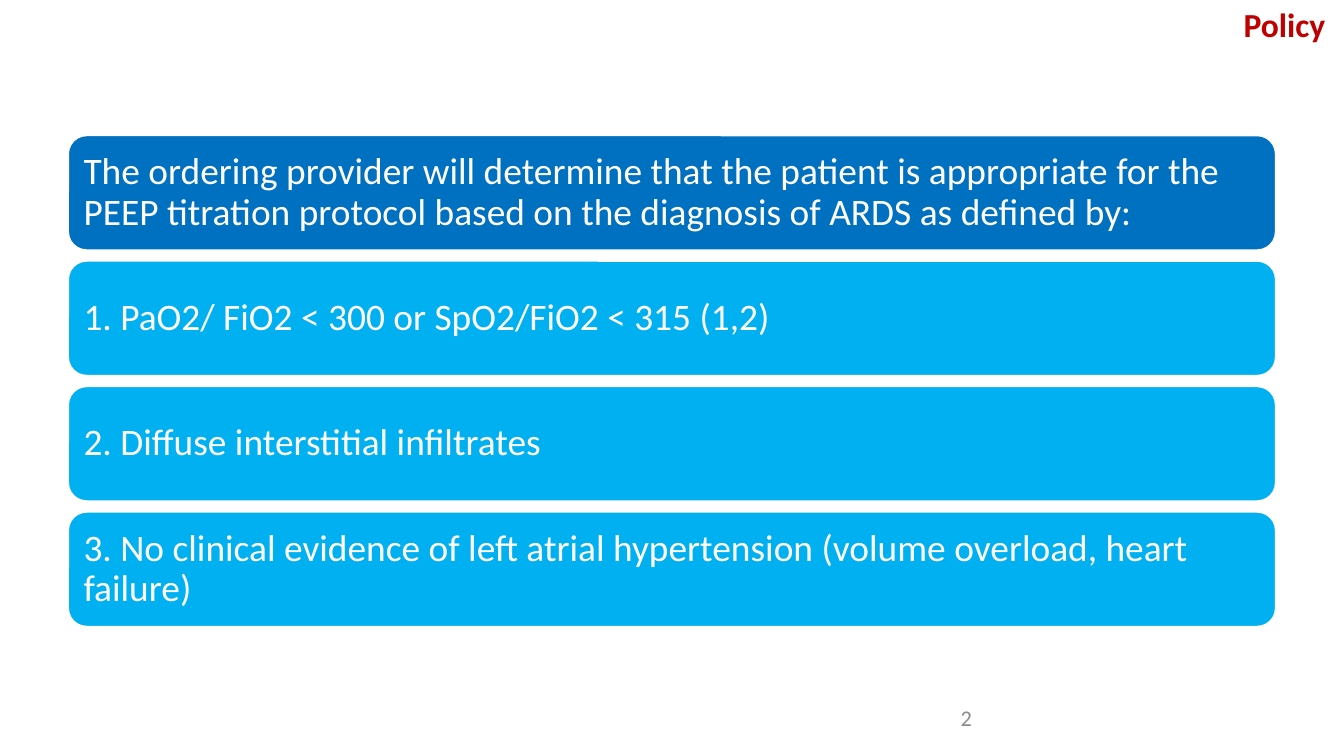
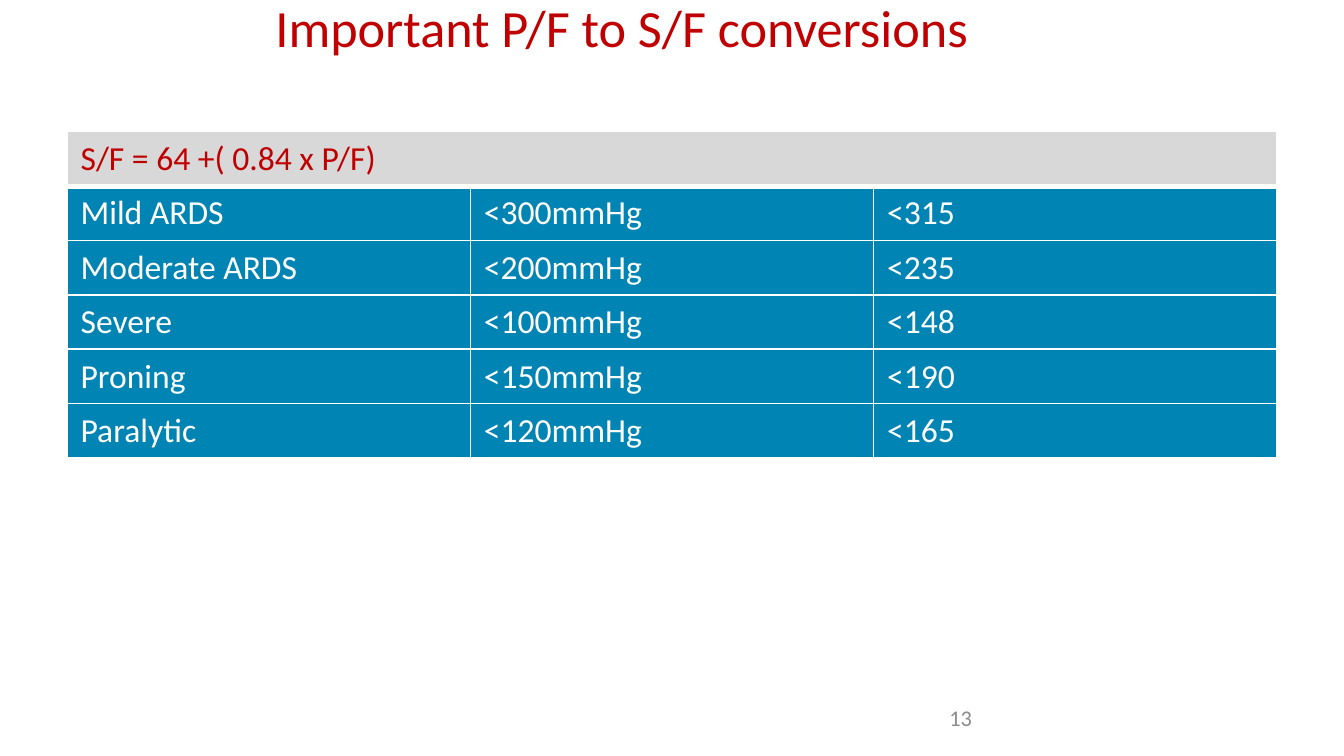
from dataclasses import dataclass

from lxml import etree
from pptx import Presentation
from pptx.dml.color import RGBColor
from pptx.enum.shapes import MSO_SHAPE
from pptx.enum.text import MSO_ANCHOR, PP_ALIGN
from pptx.oxml.ns import qn
from pptx.presentation import Presentation as Deck
from pptx.shapes.autoshape import Shape
from pptx.slide import Slide
from pptx.table import _Cell
from pptx.text.text import TextFrame
from pptx.util import Inches, Pt

ROUNDED = MSO_SHAPE.ROUNDED_RECTANGLE
MIDDLE, TOP = MSO_ANCHOR.MIDDLE, MSO_ANCHOR.TOP
LEFT, CENTER, RIGHT = PP_ALIGN.LEFT, PP_ALIGN.CENTER, PP_ALIGN.RIGHT

WHITE = RGBColor(0xFF, 0xFF, 0xFF)
RED = RGBColor(0xC0, 0x00, 0x00)
GREY = RGBColor(0x8C, 0x8C, 0x8C)
LIGHT_GREY = RGBColor(0xD8, 0xD8, 0xD8)
DARK_BLUE = RGBColor(0x00, 0x70, 0xC0)
SKY_BLUE = RGBColor(0x00, 0xB0, 0xF0)
TEAL = RGBColor(0x00, 0x84, 0xB4)

FONT = "Calibri"
SLIDE_WIDTH, SLIDE_HEIGHT = Inches(10), Inches(5.625)
COLUMN, ROW = SLIDE_WIDTH / 20, SLIDE_HEIGHT / 45
CARD_ROWS, CARD_GAP = 6.95, 0.52
TABLE_ROWS = 3.24


@dataclass(frozen=True)
class Area:
    """A rectangle in columns and rows of the slide grid."""
    left: float
    top: float
    width: float
    height: float

    def lengths(self) -> tuple[int, int, int, int]:
        return (round(self.left * COLUMN), round(self.top * ROW),
                round(self.width * COLUMN), round(self.height * ROW))


@dataclass(frozen=True)
class Card:
    text: str
    fill: RGBColor = SKY_BLUE


POLICY_TITLE = Area(5.64, 0, 14.28, 3.12)
CONVERSION_TITLE = Area(0, -0.72, 18, 4.56)
SLIDE_NUMBER = Area(13.16, 41.52, 1.5, 2.4)
CARDS_TOP, TABLE_TOP = 8, 7.84

CRITERIA = [
    Card("The ordering provider will determine that the patient is appropriate "
         "for the PEEP titration protocol based on the diagnosis of ARDS as "
         "defined by:", DARK_BLUE),
    Card("1. PaO2/ FiO2 < 300 or SpO2/FiO2 < 315 (1,2)"),
    Card("2. Diffuse interstitial infiltrates"),
    Card("3. No clinical evidence of left atrial hypertension "
         "(volume overload, heart failure)"),
]
FORMULA = "S/F = 64 +( 0.84 x P/F)"
CONVERSIONS = [
    ("Mild ARDS", "<300mmHg", "<315"),
    ("Moderate ARDS", "<200mmHg", "<235"),
    ("Severe", "<100mmHg", "<148"),
    ("Proning", "<150mmHg", "<190"),
    ("Paralytic", "<120mmHg", "<165"),
]


def write(frame: TextFrame, text: str, *, size: float, color: RGBColor,
          bold: bool = False, align: PP_ALIGN = LEFT, anchor: MSO_ANCHOR = MIDDLE,
          spacing: float = 1, indent: float = 0) -> None:
    frame.word_wrap = True
    frame.vertical_anchor = anchor
    paragraph = frame.paragraphs[0]
    paragraph.alignment = align
    paragraph.line_spacing = spacing
    if indent:
        paragraph._p.get_or_add_pPr().set("indent", str(Inches(indent)))
    run = paragraph.add_run()
    run.text = text
    run.font.name, run.font.size = FONT, Pt(size)
    run.font.bold, run.font.color.rgb = bold, color


def add_text(slide: Slide, area: Area, text: str, **text_format) -> None:
    write(slide.shapes.add_textbox(*area.lengths()).text_frame, text, **text_format)


def add_title(slide: Slide, area: Area, text: str, **text_format) -> None:
    add_text(slide, area, text, color=RED, **text_format)


def add_slide_number(slide: Slide, number: int) -> None:
    add_text(slide, SLIDE_NUMBER, str(number), size=12, color=GREY, align=RIGHT)


def add_card(slide: Slide, area: Area, card: Card) -> Shape:
    shape = slide.shapes.add_shape(ROUNDED, *area.lengths())
    shape.shadow.inherit = False
    shape.fill.solid()
    shape.fill.fore_color.rgb = card.fill
    shape.line.color.rgb = WHITE
    shape.line.width = Pt(2)
    frame = shape.text_frame
    frame.margin_left = frame.margin_right = Inches(0.08)
    frame.margin_top = frame.margin_bottom = Inches(0.08)
    write(frame, card.text, size=20, color=WHITE, spacing=0.9)
    return shape


def style_cell(cell: _Cell, fill: RGBColor, top: float = 1, bottom: float = 1) -> None:
    """Give a cell its fill and white borders, with widths in points."""
    properties = cell._tc.get_or_add_tcPr()
    for side, width in (("L", 1), ("R", 1), ("T", top), ("B", bottom)):
        line = etree.SubElement(properties, qn(f"a:ln{side}"), w=str(Pt(width)))
        solid = etree.SubElement(line, qn("a:solidFill"))
        etree.SubElement(solid, qn("a:srgbClr"), val=str(WHITE))
    cell.fill.solid()
    cell.fill.fore_color.rgb = fill


def add_conversion_table(slide: Slide) -> None:
    row_count, column_count = len(CONVERSIONS) + 1, len(CONVERSIONS[0])
    area = Area(1, TABLE_TOP, 18, TABLE_ROWS * row_count)
    table = slide.shapes.add_table(row_count, column_count, *area.lengths()).table
    table.first_row = table.horz_banding = False

    for column in range(column_count):
        style_cell(table.cell(0, column), LIGHT_GREY, bottom=3)
    header = table.cell(0, 0)
    header.merge(table.cell(0, column_count - 1))
    write(header.text_frame, FORMULA, size=18, color=RED, anchor=TOP)

    for row, values in enumerate(CONVERSIONS, start=1):
        for column, value in enumerate(values):
            cell = table.cell(row, column)
            style_cell(cell, TEAL, top=3 if row == 1 else 1)
            write(cell.text_frame, value, size=18, color=WHITE, anchor=TOP)


def add_blank_slide(presentation: Deck) -> Slide:
    return presentation.slides.add_slide(presentation.slide_layouts[6])


def build_policy_slide(presentation: Deck) -> None:
    slide = add_blank_slide(presentation)
    add_title(slide, POLICY_TITLE, "Policy", size=18, bold=True,
              align=RIGHT, spacing=0.9)
    add_slide_number(slide, 2)
    for index, card in enumerate(CRITERIA):
        top = CARDS_TOP + index * (CARD_ROWS + CARD_GAP)
        add_card(slide, Area(1, top, 18, CARD_ROWS), card)


def build_conversion_slide(presentation: Deck) -> None:
    slide = add_blank_slide(presentation)
    add_conversion_table(slide)
    add_slide_number(slide, 13)
    add_title(slide, CONVERSION_TITLE, "Important P/F to S/F conversions",
              size=28, align=CENTER, indent=0.25)


def main() -> None:
    presentation = Presentation()
    presentation.slide_width, presentation.slide_height = SLIDE_WIDTH, SLIDE_HEIGHT
    build_policy_slide(presentation)
    build_conversion_slide(presentation)
    presentation.save("out.pptx")


if __name__ == "__main__":
    main()
